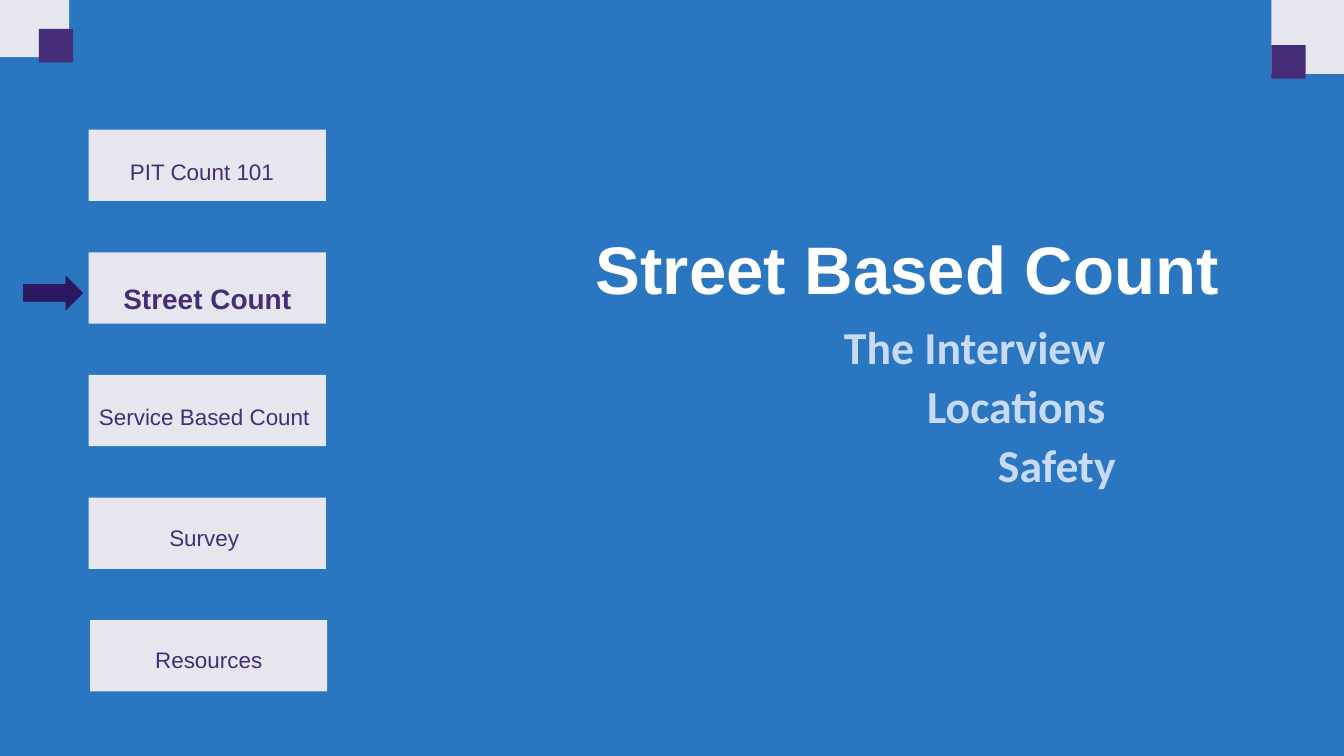
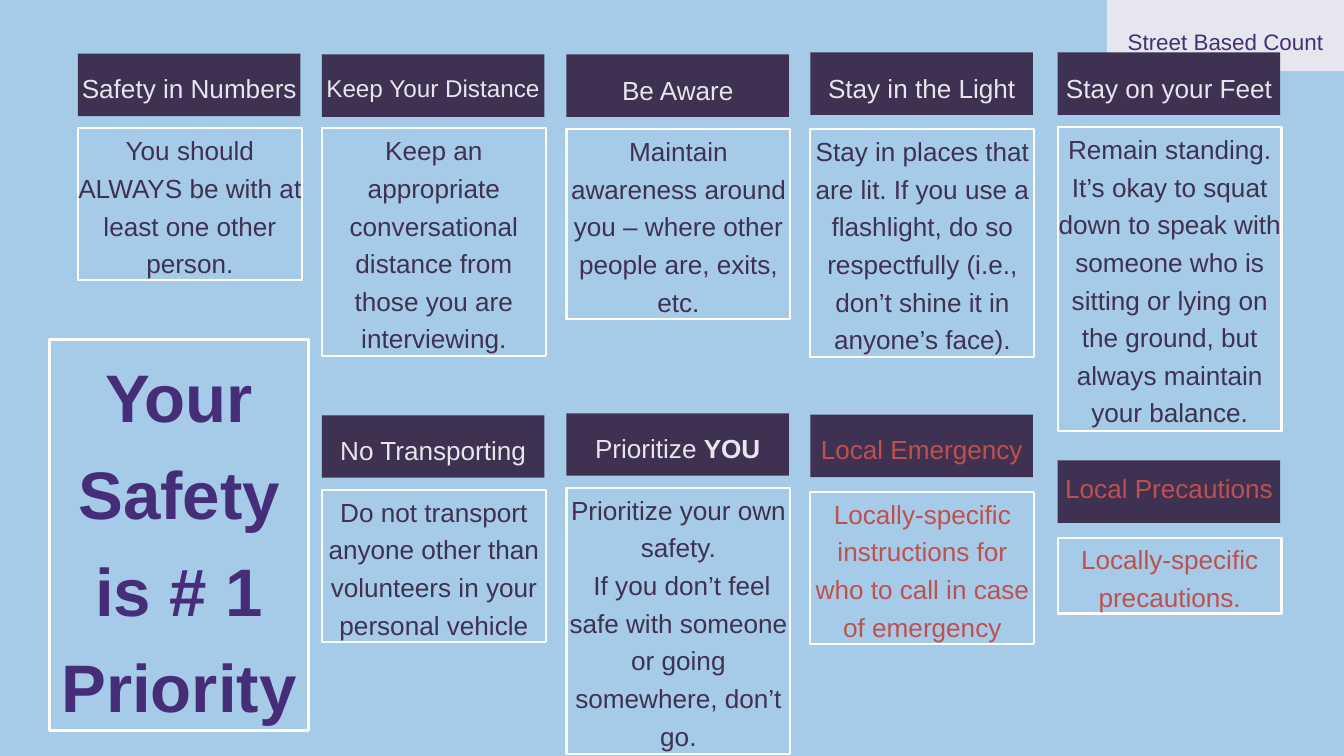
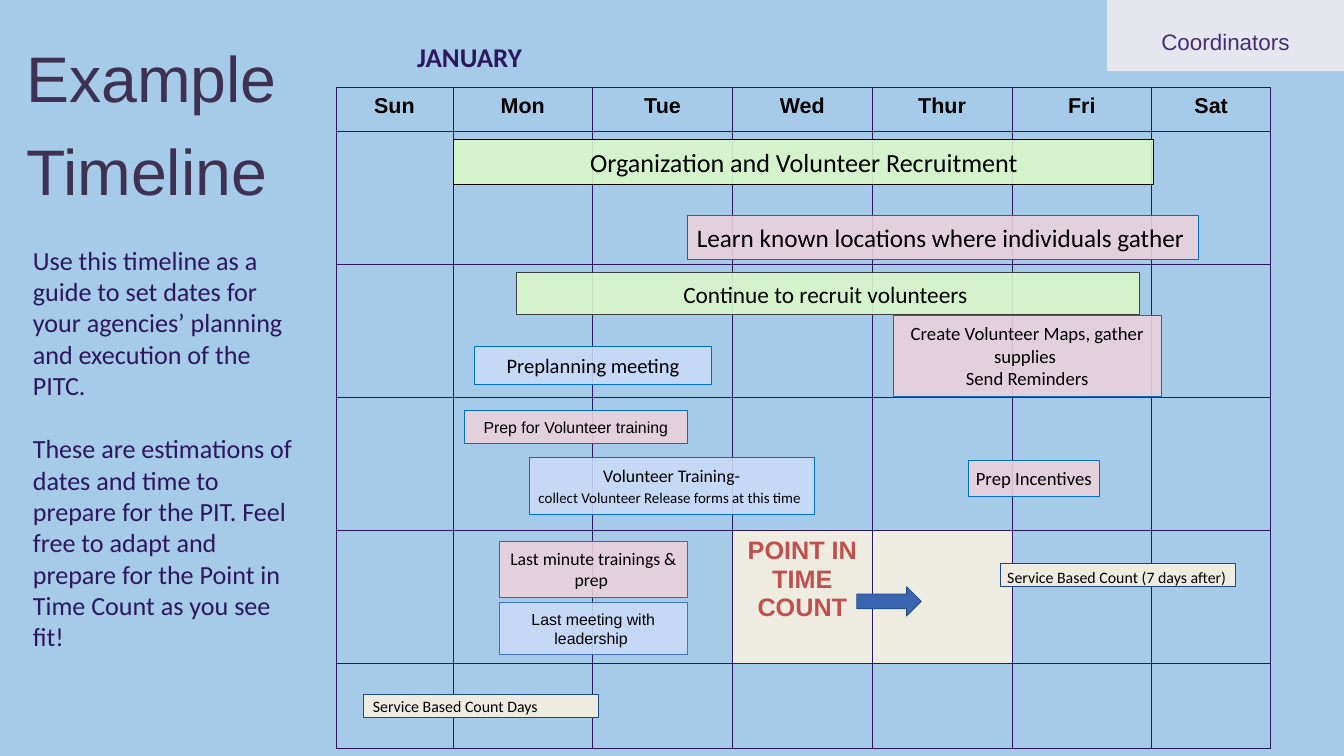
"""Build three training slides: a section opener, safety tips and a planning timeline."""
from lxml.etree import SubElement
from pptx import Presentation
from pptx.dml.color import RGBColor as RGB
from pptx.enum.shapes import MSO_SHAPE as SHAPE
from pptx.enum.text import MSO_ANCHOR as ANCHOR, PP_ALIGN as ALIGN
from pptx.oxml.ns import qn
from pptx.util import Inches, Pt

C = {
    "blue": "2B76C0", "sky": "A5CBE9", "pale": "E5E6EE", "purple": "462D78",
    "plum": "3F3151", "indigo": "2D175F", "white": "FFFFFF", "black": "000000",
    "red": "C0504D", "cream": "EEECE1", "ice": "C9DAF8", "pink": "EAD1DC",
    "green": "DAF8C9", "navy": "1F497D", "azure": "0070C0", "arrow": "3A66B1",
    "steel": "4371C3", "gray": "3F3F3F",
}


def add_box(sl, at, fill=None, line=None, width=0.75, kind=SHAPE.RECTANGLE, alpha=None):
    sp = sl.shapes.add_shape(kind, *[Inches(v) for v in at])
    sp.shadow.inherit = False
    if fill:
        sp.fill.solid()
        sp.fill.fore_color.rgb = RGB.from_string(C[fill])
    else:
        sp.fill.background()
    if alpha:
        color = sp.element.spPr.find(qn("a:solidFill"))[0]
        SubElement(color, qn("a:alpha")).set("val", str(alpha * 1000))
    if line:
        sp.line.color.rgb = RGB.from_string(C[line])
        sp.line.width = Pt(width)
    else:
        sp.line.fill.background()
    return sp


def write(tf, paras, size, color, font="Arial", bold=False, align=ALIGN.CENTER,
          spacing=1.2, inset=0, anchor=ANCHOR.TOP, before=0, after=0):
    tf.word_wrap = True
    tf.vertical_anchor = anchor
    tf.margin_left = tf.margin_right = tf.margin_top = tf.margin_bottom = Inches(inset)
    for i, runs in enumerate(paras):
        p = tf.paragraphs[0] if i == 0 else tf.add_paragraph()
        p.alignment = align
        p.line_spacing = spacing
        p.space_before, p.space_after = Pt(before), Pt(after)
        for text, run_size, run_bold in [(runs, size, bold)] if isinstance(runs, str) else runs:
            r = p.add_run()
            r.text = text
            r.font.name, r.font.size, r.font.bold = font, Pt(run_size), run_bold
            r.font.color.rgb = RGB.from_string(C[color])


prs = Presentation()
prs.slide_width, prs.slide_height = Inches(20), Inches(11.25)

slides = []
for color, tab in [("blue", None), ("sky", "Street Based Count"), ("sky", "Coordinators")]:
    sl = prs.slides.add_slide(prs.slide_layouts[6])
    sl.background.fill.solid()
    sl.background.fill.fore_color.rgb = RGB.from_string(C[color])
    if tab:
        add_box(sl, (16.47, 0, 3.53, 1.06), "pale")
        tb = sl.shapes.add_textbox(Inches(16.47), Inches(0.34), Inches(3.53), Inches(0.4))
        write(tb.text_frame, [tab], 24, "purple")
    slides.append(sl)
opener, safety, timeline = slides

for at, color in [((0, 0, 1.03, 0.85), "pale"), ((0.58, 0.43, 0.51, 0.5), "purple"),
                  ((18.92, 0, 1.08, 1.1), "pale"), ((18.92, 0.67, 0.51, 0.5), "purple")]:
    add_box(opener, at, color)

menu = [("PIT Count 101", 1.24, 0.34), ("Street Count", 1.32, 0.34),
        ("Service Based Count ", 1.32, 0.34), ("Survey ", 1.32, 0.31), ("Resources", 1.34, 0.3)]
for i, (label, left, drop) in enumerate(menu):
    top = 1.93 + 7.3 * i / 4
    current = label == "Street Count"
    add_box(opener, (max(left, 1.32), top, 3.53, 1.06), "pale")
    tb = opener.shapes.add_textbox(Inches(left), Inches(top + drop), Inches(3.53),
                                   Inches(0.5 if current else 0.4))
    write(tb.text_frame, [label], 30 if current else 24, "purple", bold=current)
add_box(opener, (0.35, 4.11, 0.88, 0.5), "indigo", "indigo", kind=SHAPE.RIGHT_ARROW)

tb = opener.shapes.add_textbox(Inches(7.51), Inches(3.14), Inches(11.99), Inches(1.21))
write(tb.text_frame, ["Street Based Count"], 72, "white", bold=True)
tb = opener.shapes.add_textbox(Inches(9.92), Inches(4.79), Inches(6.78), Inches(4.97))
write(tb.text_frame, ["The Interview ", "Locations ", "Safety"], 49, "ice", "Calibri", True,
      ALIGN.RIGHT, 0.9, 0.05, before=10)
tb.text_frame.margin_left = tb.text_frame.margin_right = Inches(0.1)

sp = add_box(safety, (0.74, 5.05, 3.85, 5.82), line="white", width=3)
write(sp.text_frame, ["Your Safety is # 1 Priority"], 72, "purple", bold=True)

columns = [1.16, 4.79, 8.43, 12.06, 15.74]
cards = [
    (0, 0.8, 0.99, 28, "Safety in Numbers", 1.91, 2.26,
     ["You should ALWAYS be with at least one other person."]),
    (1, 0.81, 1.01, 26, "Keep Your Distance", 1.91, 3.39,
     ["Keep an appropriate conversational distance from those you are interviewing."]),
    (2, 0.81, 1.01, 28, "Be Aware", 1.92, 2.83,
     ["Maintain awareness around you – where other people are, exits, etc."]),
    (3, 0.78, 0.98, 28, "Stay in the Light", 1.92, 3.39,
     ["Stay in places that are lit. If you use a flashlight, do so respectfully "
      "(i.e., don’t shine it in anyone’s face)."]),
    (4, 0.78, 0.98, 28, "Stay on your Feet", 1.89, 4.52,
     ["Remain standing. It’s okay to squat down to speak with someone who is sitting "
      "or lying on the ground, but always maintain your balance."]),
    (1, 6.18, 6.37, 28, "No Transporting", 7.29, 2.26,
     ["Do not transport anyone other than volunteers in your personal vehicle"]),
    (2, 6.15, 6.34, 28, [("Prioritize ", 28, False), ("YOU", 28, True)], 7.26, 3.96,
     ["Prioritize your own safety.",
      " If you don’t feel safe with someone or going somewhere, don’t go."]),
    (3, 6.17, 6.36, 28, "Local Emergency", 7.32, 2.26,
     ["Locally-specific instructions for who to call in case of emergency"]),
    (4, 6.85, 6.93, 28, "Local Precautions", 8, 1.13, ["Locally-specific precautions."]),
]
for col, band_top, title_top, title_size, title, body_top, body_h, body in cards:
    left = columns[col]
    local = "Local" in title
    sp = add_box(safety, (left, body_top, 3.33, body_h), line="white", width=2.25)
    write(sp.text_frame, body, 28, "red" if local else "plum")
    add_box(safety, (left, band_top, 3.31, 0.93), "plum")
    tb = safety.shapes.add_textbox(Inches(left - 0.01), Inches(title_top), Inches(3.33), Inches(0.57))
    write(tb.text_frame, [title], title_size, "red" if local else "pale")

tb = timeline.shapes.add_textbox(Inches(0.39), Inches(0.34), Inches(4.25), Inches(2.56))
write(tb.text_frame, ["Example", "Timeline"], 69, "plum", align=ALIGN.LEFT)

col_widths = [1.74] + [2.08] * 5 + [1.77]
row_heights = [0.65] + [1.98] * 4 + [1.27]
days = ["Sun", "Mon", "Tue", "Wed", "Thur", "Fri", "Sat"]
calendar = timeline.shapes.add_table(6, 7, Inches(5), Inches(1.3), Inches(13.93), Inches(9.82)).table
calendar.first_row = calendar.horz_banding = False
for col, w in zip(calendar.columns, col_widths):
    col.width = Inches(w)
for row, h in zip(calendar.rows, row_heights):
    row.height = Inches(h)
for cell in calendar.iter_cells():
    cell.margin_left = cell.margin_right = cell.margin_top = cell.margin_bottom = Inches(0.1)
    tc_pr = cell._tc.get_or_add_tcPr()
    for side in ("a:lnL", "a:lnR", "a:lnT", "a:lnB"):
        ln = SubElement(tc_pr, qn(side), w=str(Pt(0.75)))
        SubElement(SubElement(ln, qn("a:solidFill")), qn("a:srgbClr"), val=C["indigo"])
    cell.fill.background()
for i, day in enumerate(days):
    write(calendar.cell(0, i).text_frame, [day], 23, "black", bold=True, spacing=1, inset=0.1)
for i in (3, 4):
    calendar.cell(4, i).fill.solid()
    calendar.cell(4, i).fill.fore_color.rgb = RGB.from_string(C["cream"])
write(calendar.cell(4, 3).text_frame, ["POINT IN TIME COUNT"], 27, "red", bold=True,
      spacing=1, inset=0.1)

add_box(timeline, (12.75, 8.73, 0.96, 0.44), "arrow", "navy", kind=SHAPE.RIGHT_ARROW)
for left, top in [(14.89, 8.39), (5.41, 10.33)]:
    add_box(timeline, (left, top, 3.49, 0.34), "cream", "navy")

tasks = [
    ((7.87, 6.81, 4.25, 0.84), "ice", "azure", 19, "Calibri",
     ["Volunteer Training-",
      [("collect Volunteer Release forms at this time", 16, False), (" ", 19, False)]]),
    ((14.41, 6.85, 1.95, 0.54), "pink", "azure", 20, "Calibri", ["Prep Incentives "]),
    ((7.06, 5.15, 3.53, 0.57), "ice", "azure", 22, "Calibri", ["Preplanning meeting"]),
    ((13.29, 4.69, 3.99, 1.21), "pink", "azure", 20, "Calibri",
     ["Create Volunteer Maps, gather supplies ", "Send Reminders"]),
    ((7.43, 8.05, 2.8, 0.84), "pink", "arrow", 19, "Calibri", ["Last minute trainings & prep "]),
    ((6.75, 2.07, 10.42, 0.67), "green", "black", 28, "Calibri",
     ["Organization and Volunteer Recruitment"]),
    ((10.23, 3.2, 7.61, 0.66), "pink", "azure", 27, "Calibri",
     ["Learn known locations where individuals gather "]),
    ((7.69, 4.06, 9.26, 0.62), "green", "gray", 25, "Calibri", ["Continue to recruit volunteers "]),
    ((7.43, 8.97, 2.8, 0.77), "ice", "steel", 17, "Arial", ["Last meeting with leadership "]),
    ((6.91, 6.11, 3.32, 0.49), "pink", "azure", 17, "Arial", ["Prep for Volunteer training"]),
]
for at, fill, line, size, font, paras in tasks:
    sp = add_box(timeline, at, fill, line, alpha=89)
    write(sp.text_frame, paras, size, "black", font, spacing=1, inset=0.1, anchor=ANCHOR.MIDDLE)

notes = [
    ((14.89, 8.34, 3.49, 0.49), 17, "black", False, 0, ["Service Based Count (7 days after)"]),
    ((5.45, 10.26, 3.99, 0.49), 17, "black", False, 0, ["Service Based Count Days"]),
    ((6.11, 0.5, 3.99, 0.69), 29, "indigo", True, 0, ["JANUARY"]),
    ((0.39, 3.53, 4.25, 6.33), 28, "indigo", False, 34,
     ["Use this timeline as a guide to set dates for your agencies’ planning and execution "
      "of the PITC.",
      "These are estimations of dates and time to prepare for the PIT. Feel free to adapt and "
      "prepare for the Point in Time Count as you see fit!"]),
]
for at, size, color, bold, after, paras in notes:
    tb = timeline.shapes.add_textbox(*[Inches(v) for v in at])
    write(tb.text_frame, paras, size, color, "Calibri", bold, ALIGN.LEFT, 1, 0.1, after=after)

prs.save("out.pptx")
